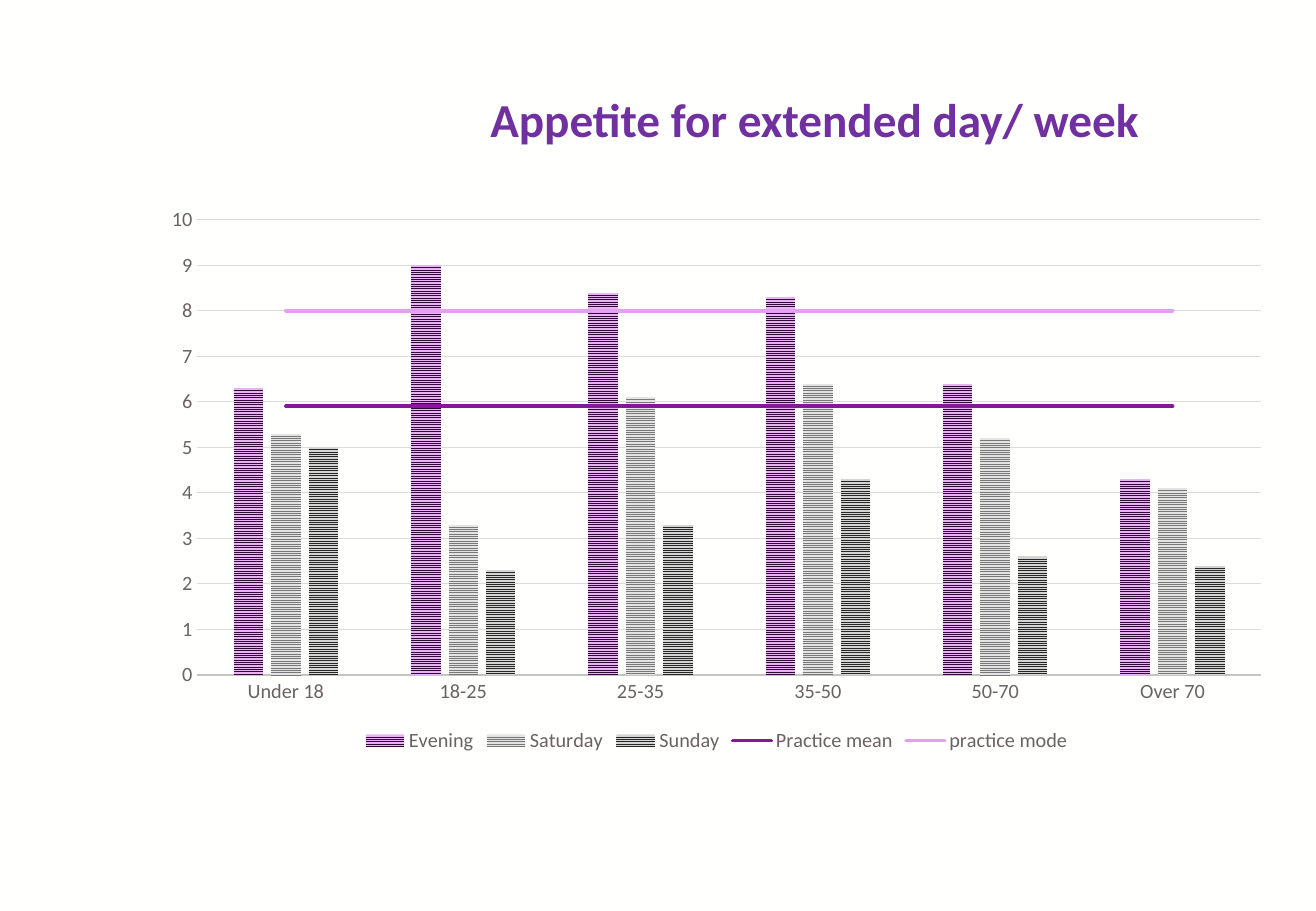
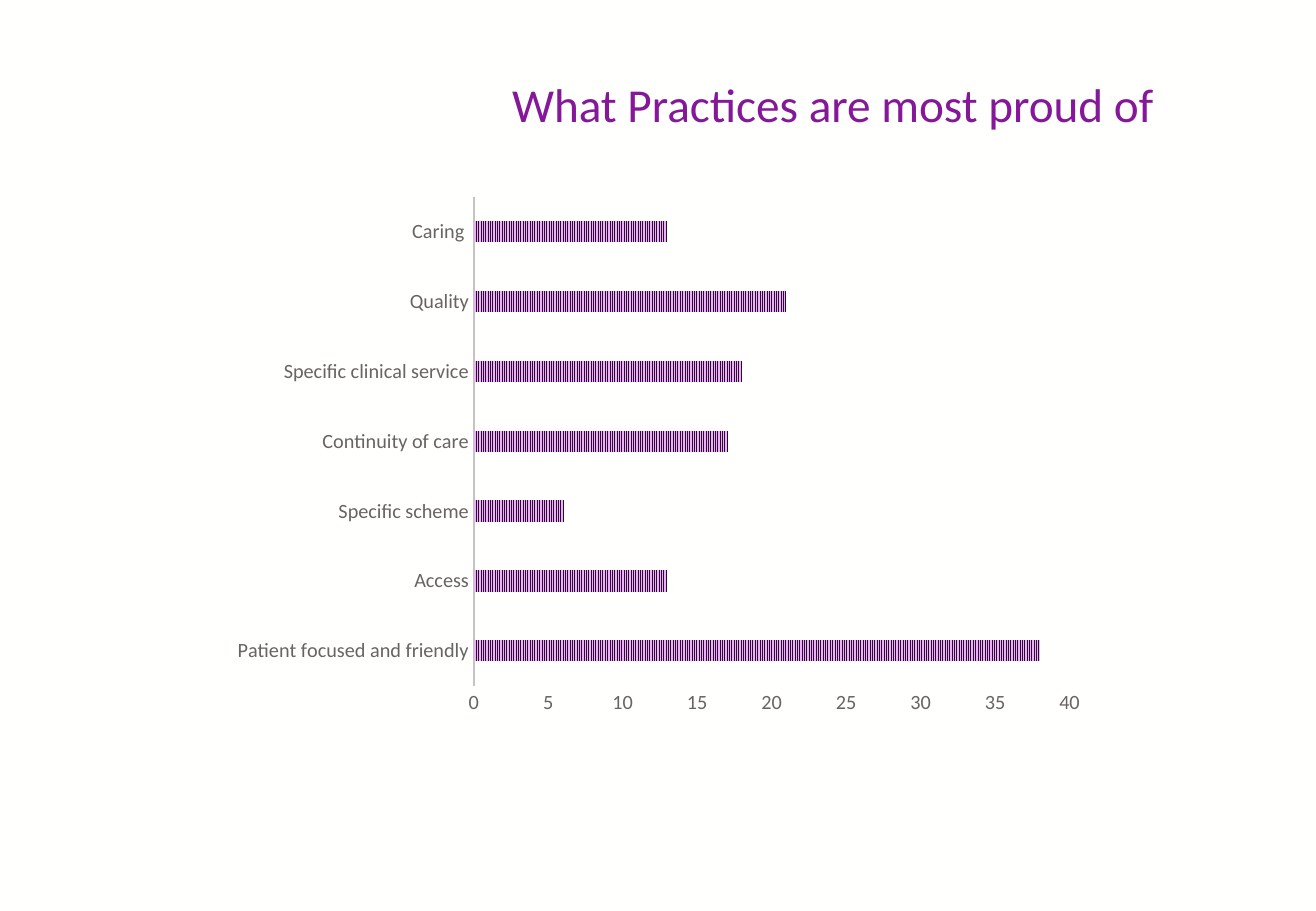
from lxml import etree
from pptx import Presentation
from pptx.chart import data
from pptx.dml.color import RGBColor
from pptx.enum import chart as ec, dml, text
from pptx.oxml import ns, xmlchemy as xc
from pptx.util import Cm, Pt

PAPER = RGBColor(0xFF, 0xFF, 0xFE)
VIOLET = RGBColor(0x70, 0x30, 0xA0)
PURPLE = RGBColor(0x85, 0x18, 0x98)
PINK = RGBColor(0xE4, 0x9F, 0xF0)
PLUM = RGBColor(0x31, 0x09, 0x38)
LILAC = RGBColor(0xE9, 0xB2, 0xF3)
GRAY = RGBColor(0x77, 0x78, 0x77)
PALE = RGBColor(0xE4, 0xE4, 0xE4)
BLACK = RGBColor(0x27, 0x27, 0x27)
SILVER = RGBColor(0xD4, 0xD4, 0xD4)
LABEL = RGBColor(0x69, 0x63, 0x63)
AXIS = RGBColor(0xC6, 0xC3, 0xC3)
GRID = RGBColor(0xDD, 0xDB, 0xDB)
INK = RGBColor(0x14, 0x13, 0x13)
FONT = "Calibri"


def style(font, size, color, bold=False):
    font.name = FONT
    font.size = Pt(size)
    font.bold = bold
    font.color.rgb = color


def build(head, hue, bold, spot, kind, box, cats, rows, top, step, gap, lap, weave, tints):
    slide = prs.slides.add_slide(prs.slide_layouts[5])
    title = slide.shapes.title
    title.left, title.top, title.width, title.height = map(Cm, spot)
    title.text = head
    title.text_frame.vertical_anchor = text.MSO_ANCHOR.MIDDLE
    para = title.text_frame.paragraphs[0]
    para.alignment = text.PP_ALIGN.CENTER
    style(para.font, 28, hue, bold)

    table = data.CategoryChartData()
    table.categories = cats
    for name, vals in rows:
        table.add_series(name, vals)
    chart = slide.shapes.add_chart(kind, *map(Cm, box), table).chart
    chart.has_title = False
    chart.has_legend = False
    style(chart.font, 10, INK)
    for axis in (chart.category_axis, chart.value_axis):
        axis.major_tick_mark = axis.minor_tick_mark = ec.XL_TICK_MARK.NONE
        style(axis.tick_labels.font, 12, LABEL)
    line = chart.category_axis.format.line
    line.color.rgb = AXIS
    line.width = Pt(1.5)
    axis = chart.value_axis
    axis.format.line.fill.background()
    axis.has_major_gridlines = False
    axis.minimum_scale, axis.maximum_scale, axis.major_unit = 0, top, step
    plot = chart.plots[0]
    plot.vary_by_categories = False
    plot.gap_width, plot.overlap = gap, lap
    for bar, (fore, back) in zip(plot.series, tints):
        fill = bar.format.fill
        fill.patterned()
        fill.pattern = weave
        fill.fore_color.rgb = fore
        fill.back_color.rgb = back
    return chart


prs = Presentation()
prs.slide_width, prs.slide_height = Cm(27.51), Cm(19.05)
fill = prs.slide_master.background.fill
fill.solid()
fill.fore_color.rgb = PAPER

ages = ["Under 18", "18-25", "25-35", "35-50", "50-70", "Over 70"]
rows = [
    ("Evening", [6.3, 9, 8.4, 8.3, 6.4, 4.3]),
    ("Saturday", [5.3, 3.3, 6.1, 6.4, 5.2, 4.1]),
    ("Sunday", [5, 2.3, 3.3, 4.3, 2.6, 2.4]),
    ("Practice mean", [5.9] * len(ages)),
    ("practice mode", [8] * len(ages)),
]
chart = build(
    "Appetite for extended day/ week", VIOLET, True, (7.87, 1.52, 18.31, 1.91),
    ec.XL_CHART_TYPE.COLUMN_CLUSTERED, (3.12, 4.11, 23.72, 11.73), ages, rows,
    10, 1, 247, -27, dml.MSO_PATTERN.NARROW_HORIZONTAL,
    [(PLUM, LILAC), (GRAY, PALE), (BLACK, SILVER)])
chart.value_axis.has_major_gridlines = True
line = chart.value_axis.major_gridlines.format.line
line.color.rgb = GRID
line.width = Pt(0.75)
chart.has_legend = True
chart.legend.position = ec.XL_LEGEND_POSITION.BOTTOM
chart.legend.include_in_layout = False
style(chart.legend.font, 12, LABEL)

bars = chart.plots[0]._element
lines = xc.OxmlElement("c:lineChart")
bars.addnext(lines)
etree.SubElement(lines, ns.qn("c:grouping")).set("val", "standard")
etree.SubElement(lines, ns.qn("c:varyColors")).set("val", "0")
for ser in bars.xpath("c:ser")[3:]:
    for flag in ser.xpath("c:invertIfNegative"):
        ser.remove(flag)
    lines.append(ser)
etree.SubElement(lines, ns.qn("c:marker")).set("val", "1")
for ref in bars.xpath("c:axId"):
    etree.SubElement(lines, ns.qn("c:axId")).set("val", ref.get("val"))
for ser, hue in zip(chart.plots[1].series, (PURPLE, PINK)):
    ser.smooth = False
    ser.marker.style = ec.XL_MARKER_STYLE.NONE
    ser.format.line.color.rgb = hue
    ser.format.line.width = Pt(2.25)
    ser._element.xpath("c:spPr/a:ln")[0].set("cap", "rnd")

build(
    "What Practices are most proud of", PURPLE, False, (8.53, 1.22, 17.75, 1.91),
    ec.XL_CHART_TYPE.BAR_CLUSTERED, (4.6, 3.89, 18.34, 11.28),
    ["Patient focused and friendly", "Access", "Specific scheme", "Continuity of care",
     "Specific clinical service", "Quality", "Caring "],
    [("Series 1", [38, 13, 6, 17, 18, 21, 13])],
    40, 5, 227, -48, dml.MSO_PATTERN.NARROW_VERTICAL, [(PLUM, LILAC)])

prs.save("out.pptx")
